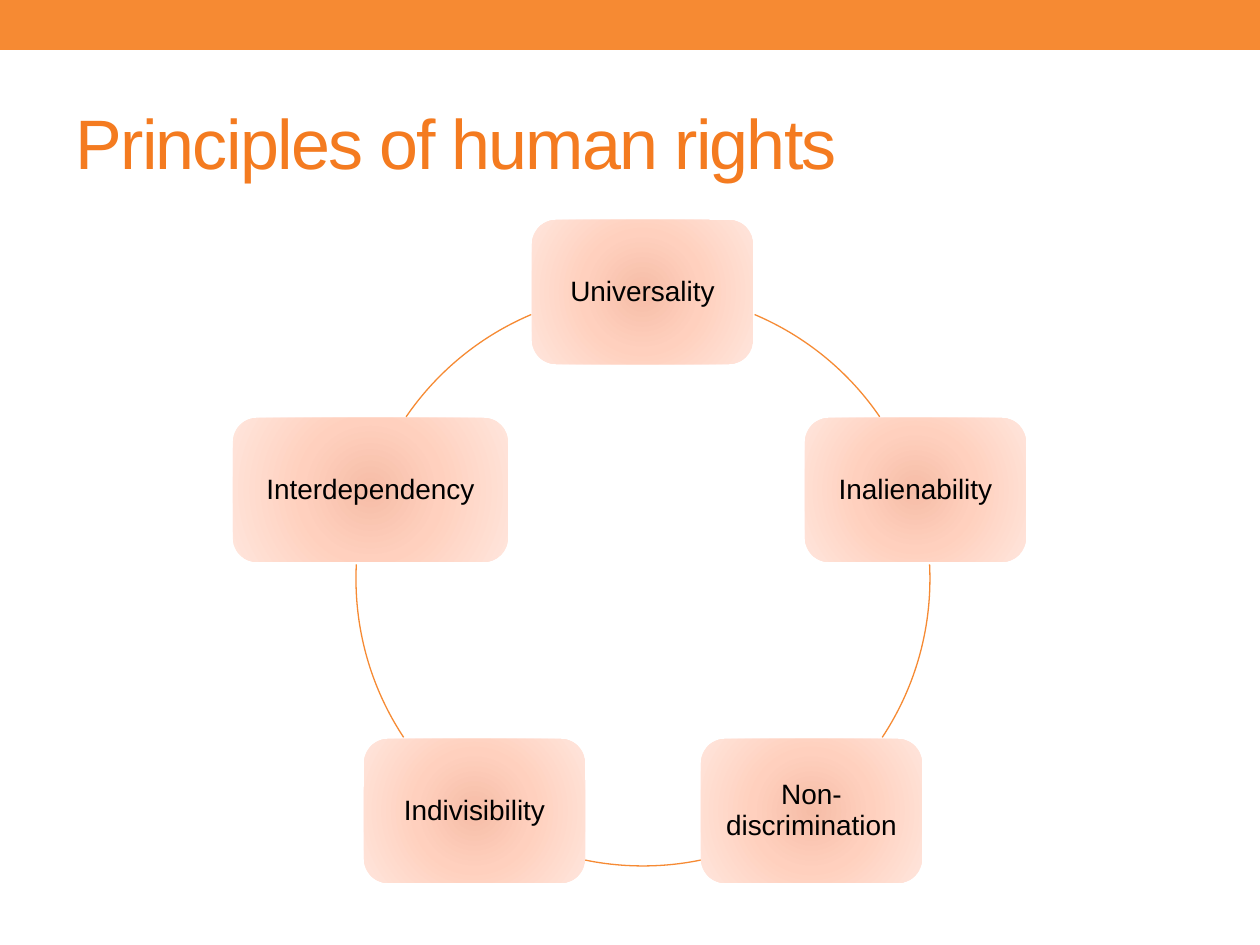
import math

import pptx
import pptx.dml.color
import pptx.enum.shapes
import pptx.enum.text
import pptx.oxml
import pptx.oxml.ns
import pptx.util

PX = 914400 // 126
SHAPES = pptx.enum.shapes.MSO_SHAPE
ALIGN = pptx.enum.text.PP_ALIGN
ORANGE = "F68A33"
GLOW = [(0, "F6BDA7"), (45, "FFD0BE"), (100, "FFE5DC")]

RING_X, RING_Y, RING_RADIUS = 643, 579, 287
NODE_HEIGHT = 144
PRINCIPLES = [
    ("Universality", 221),
    ("Inalienability", 221),
    ("Non-discrimination", 221),
    ("Indivisibility", 221),
    ("Interdependency", 275),
]
# Visible stretches of the ring, in degrees clockwise from the right.
RING_ARCS = [(292.9, 325.6), (357.1, 33.5), (78.4, 101.6), (146.5, 182.9), (214.4, 247.1)]


def px(length):
    return pptx.util.Emu(round(length) * PX)


def color(value):
    return pptx.dml.color.RGBColor.from_string(value)


def write(frame, text, size, fill, align=ALIGN.LEFT, margin=None, line_spacing=None, tracking=None):
    frame.word_wrap = True
    frame.vertical_anchor = pptx.enum.text.MSO_ANCHOR.MIDDLE
    if margin is not None:
        frame.margin_left = frame.margin_right = px(margin)
        frame.margin_top = frame.margin_bottom = px(margin)
    paragraph = frame.paragraphs[0]
    paragraph.alignment = align
    if line_spacing:
        paragraph.line_spacing = line_spacing
    run = paragraph.add_run()
    run.text = text
    run.font.name = "Arial"
    run.font.size = pptx.util.Pt(size)
    run.font.color.rgb = color(fill)
    if tracking:
        run.font._element.set("spc", str(tracking * 100))


def add_plain_shape(slide, kind, left, top, width, height):
    """Add a preset shape without shadow, fill or outline."""
    shape = slide.shapes.add_shape(kind, px(left), px(top), px(width), px(height))
    shape.shadow.inherit = False
    shape.fill.background()
    shape.line.fill.background()
    return shape


def fill_radial(shape, stops):
    """Swap the shape's empty fill for a gradient running out from its centre."""
    stop_xml = "".join(
        f'<a:gs pos="{position * 1000}"><a:srgbClr val="{value}"/></a:gs>'
        for position, value in stops
    )
    gradient = pptx.oxml.parse_xml(
        f'<a:gradFill {pptx.oxml.ns.nsdecls("a")} rotWithShape="1"><a:gsLst>{stop_xml}</a:gsLst>'
        '<a:path path="circle"><a:fillToRect l="100000" t="100000" r="100000" b="100000"/>'
        "</a:path></a:gradFill>"
    )
    properties = shape._element.spPr
    properties.replace(properties.find(pptx.oxml.ns.qn("a:noFill")), gradient)


def add_header(slide):
    band = add_plain_shape(slide, SHAPES.RECTANGLE, 0, 0, 1260, 50)
    band.fill.solid()
    band.fill.fore_color.rgb = color(ORANGE)
    title = slide.shapes.title
    title.left, title.top, title.width, title.height = px(63), px(73), px(1134), px(136)
    write(title.text_frame, "Principles of human rights", 40, "F47B20", tracking=-1)


def add_ring_arc(slide, start, end):
    arc = add_plain_shape(
        slide, SHAPES.ARC, RING_X - RING_RADIUS, RING_Y - RING_RADIUS,
        2 * RING_RADIUS, 2 * RING_RADIUS,
    )
    # Angles are stored in 60000ths of a degree, adjustments in 100000ths.
    arc.adjustments[0] = start * 0.6
    arc.adjustments[1] = end * 0.6
    arc.line.color.rgb = color(ORANGE)
    arc.line.width = pptx.util.Pt(0.75)


def add_principle(slide, name, width, angle):
    center_x = RING_X + RING_RADIUS * math.cos(angle)
    center_y = RING_Y + RING_RADIUS * math.sin(angle)
    node = add_plain_shape(
        slide, SHAPES.ROUNDED_RECTANGLE, center_x - width / 2, center_y - NODE_HEIGHT / 2,
        width, NODE_HEIGHT,
    )
    fill_radial(node, GLOW)
    write(node.text_frame, name, 16, "000000", align=ALIGN.CENTER, margin=16, line_spacing=0.9)


def main():
    deck = pptx.Presentation()
    deck.slide_width, deck.slide_height = px(1260), px(945)
    slide = deck.slides.add_slide(deck.slide_layouts[5])
    add_header(slide)
    step = math.tau / len(PRINCIPLES)
    for index, ((name, width), (start, end)) in enumerate(zip(PRINCIPLES, RING_ARCS)):
        add_principle(slide, name, width, index * step - math.pi / 2)
        add_ring_arc(slide, start, end)
    deck.save("out.pptx")


if __name__ == "__main__":
    main()
